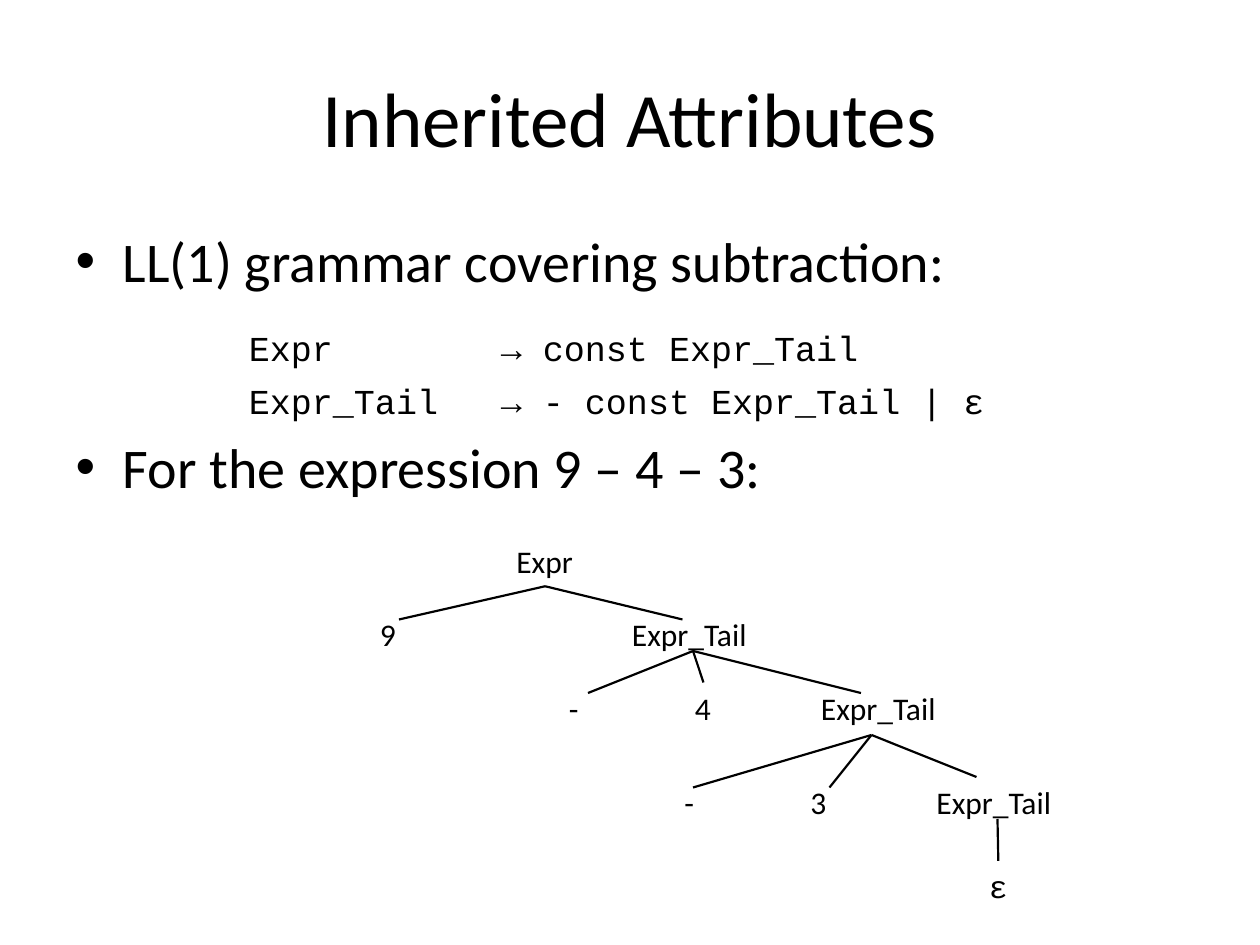
import pptx
import pptx.util
import pptx.dml.color
import pptx.enum.shapes
import pptx.enum.text
import lxml.etree

Pt = pptx.util.Pt

THEME = {
    "font": "Calibri",
    "code": "Courier New",
    "ink": pptx.dml.color.RGBColor(0, 0, 0),
    "title": 44,
    "body": 32,
    "rule": 20,
    "node": 18,
    "line": 1.25,
    "tab": 72,
}

TITLE = "Inherited Attributes"
BODY = [
    (True, [("LL(1) grammar covering subtraction:", "font", "body")]),
    (False, [("\t\t", "font", "body"),
             ("Expr \t\t→ const Expr_Tail", "code", "rule")]),
    (False, [("\t\tExpr_Tail \t→ - const Expr_Tail | ε", "code", "rule")]),
    (True, [("For the expression 9 – 4 – 3:", "font", "body")]),
]

ROWS = [
    ("Expr", 288, 306, 47, "font"),
    ("9\t\tExpr_Tail", 210, 348, 226, "font"),
    ("-\t4\tExpr_Tail", 318, 390, 226, "font"),
    ("-\t3\tExpr_Tail", 384, 444, 226, "font"),
    ("ε", 558, 492, 25, "code"),
]
ROW_HIGH = 29

FANS = [
    ((312, 335), [(228, 354), (390, 354)]),
    ((396, 372), [(336, 396), (402, 390), (492, 396)]),
    ((498, 420), [(396, 450), (474, 450), (558, 444)]),
    ((570, 468), [(571, 492)]),
]


def add_run(par, text, face, size):
    run = par.add_run()
    run.text = text
    run.font.name = THEME[face]
    run.font.size = Pt(THEME[size])
    run.font.color.rgb = THEME["ink"]


def place(shape, left, top, width, height):
    shape.left, shape.top = Pt(left), Pt(top)
    shape.width, shape.height = Pt(width), Pt(height)


def set_tabs(par):
    par._p.get_or_add_pPr().set("defTabSz", str(Pt(THEME["tab"])))


def hide_mark(par):
    props = par._p.get_or_add_pPr()
    lxml.etree.SubElement(props, pptx.oxml.ns.qn("a:buNone"))


def fill_text(slide):
    title = slide.shapes.title
    place(title, 36, 21.6, 648, 90)
    frame = title.text_frame
    frame.vertical_anchor = pptx.enum.text.MSO_ANCHOR.MIDDLE
    add_run(frame.paragraphs[0], TITLE, "font", "title")

    body = slide.placeholders[1]
    place(body, 36, 126, 648, 174)
    frame = body.text_frame
    frame.auto_size = pptx.enum.text.MSO_AUTO_SIZE.NONE
    for i, (mark, runs) in enumerate(BODY):
        par = frame.add_paragraph() if i else frame.paragraphs[0]
        set_tabs(par)
        if not mark:
            hide_mark(par)
        for run in runs:
            add_run(par, *run)


def add_row(slide, text, left, top, width, face):
    box = slide.shapes.add_textbox(Pt(left), Pt(top), Pt(width), Pt(ROW_HIGH))
    frame = box.text_frame
    frame.word_wrap = False
    frame.auto_size = pptx.enum.text.MSO_AUTO_SIZE.SHAPE_TO_FIT_TEXT
    par = frame.paragraphs[0]
    set_tabs(par)
    add_run(par, text, face, "node")
    return box


def add_branch(slide, start, end):
    line = slide.shapes.add_connector(
        pptx.enum.shapes.MSO_CONNECTOR.STRAIGHT,
        *(Pt(n) for n in start + end))
    line.line.color.rgb = THEME["ink"]
    line.line.width = Pt(THEME["line"])
    lxml.etree.SubElement(line._element.spPr, pptx.oxml.ns.qn("a:effectLst"))
    return line


def draw_tree(slide):
    boxes = [add_row(slide, *row) for row in ROWS]
    fans = [[add_branch(slide, start, end) for end in ends]
            for start, ends in FANS]
    for line in fans[0]:
        line.begin_connect(boxes[0], 2)
    fans[-1][0].end_connect(boxes[-1], 0)


def main():
    deck = pptx.Presentation()
    deck.slide_width, deck.slide_height = Pt(720), Pt(540)
    slide = deck.slides.add_slide(deck.slide_layouts[1])
    fill_text(slide)
    draw_tree(slide)
    deck.save("out.pptx")


if __name__ == "__main__":
    main()
